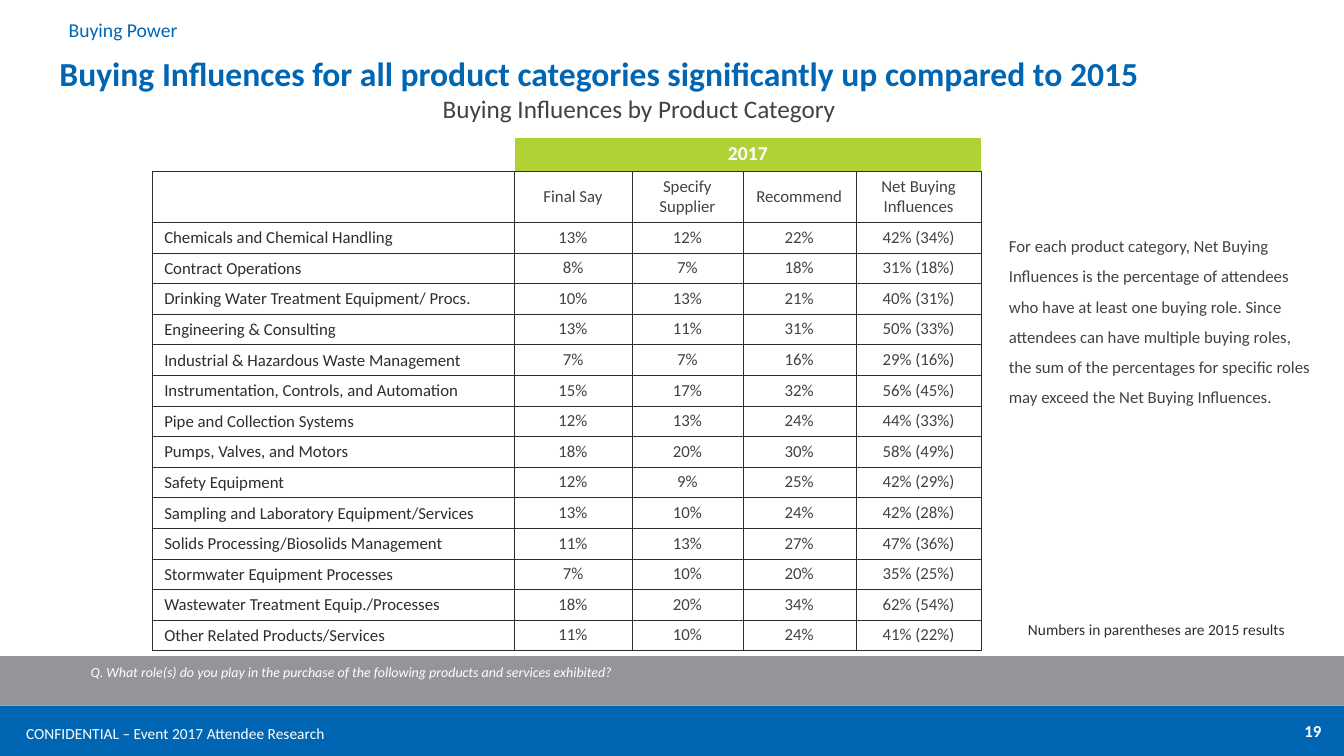
from dataclasses import dataclass
from typing import NamedTuple

from lxml.etree import SubElement
from pptx import Presentation
from pptx.dml.color import RGBColor
from pptx.enum.shapes import MSO_SHAPE
from pptx.enum.text import MSO_ANCHOR, MSO_AUTO_SIZE, PP_ALIGN
from pptx.oxml.ns import qn
from pptx.slide import Slide
from pptx.table import _Cell
from pptx.text.text import TextFrame
from pptx.util import Pt

FONT = "Calibri"
BLUE, GRAY, GREEN, WHITE = "0066B3", "939598", "B0D235", "FFFFFF"
TEXT_GRAY, NEAR_BLACK = "444143", "2F2D2E"


class Area(NamedTuple):
    left: float
    top: float
    width: float
    height: float


@dataclass(frozen=True)
class TextStyle:
    size: float
    color: str
    bold: bool = False
    italic: bool = False
    align: PP_ALIGN = PP_ALIGN.LEFT
    line_spacing: float = 1.0
    space_after: float = 0
    hanging: float = 0


@dataclass(frozen=True)
class TextBlock:
    text: str
    area: Area
    style: TextStyle
    grows: bool = True


@dataclass(frozen=True)
class Band:
    area: Area
    color: str


class Border(NamedTuple):
    color: str
    width: float


class Category(NamedTuple):
    name: str
    final_say: str
    specify_supplier: str
    recommend: str
    net_influences: str


BANDS = [
    Band(Area(0, 504, 960, 36), BLUE),
    Band(Area(0, 468.7, 960, 35.3), GRAY),
]

TITLE = TextBlock(
    "Buying Influences for all product categories significantly up compared to 2015",
    Area(35.3, 41.8, 904.3, 24.5),
    TextStyle(24, BLUE, bold=True, line_spacing=0.9), grows=False)
SECTION = TextBlock(
    "Buying Power", Area(41.8, 10, 185, 25.2),
    TextStyle(14, BLUE, line_spacing=0.9), grows=False)

TEXT_BOXES = [
    TextBlock("CONFIDENTIAL – Event 2017 Attendee Research",
              Area(11.5, 514, 547, 20.9), TextStyle(11, WHITE)),
    TextBlock("19", Area(735, 511.2, 216, 28.8),
              TextStyle(12, WHITE, bold=True, align=PP_ALIGN.RIGHT), grows=False),
    TextBlock("Q. What role(s) do you play in the purchase of the following "
              "products and services exhibited?",
              Area(57.6, 470.2, 811.4, 19.4),
              TextStyle(10, WHITE, italic=True, hanging=9.4)),
    TextBlock("Buying Influences by Product Category",
              Area(275.8, 63.4, 361.4, 28.8),
              TextStyle(18, TEXT_GRAY, align=PP_ALIGN.CENTER)),
    TextBlock("For each product category, Net Buying Influences is the percentage "
              "of attendees who have at least one buying role. Since attendees can "
              "have multiple buying roles, the sum of the percentages for specific "
              "roles may exceed the Net Buying Influences.",
              Area(713.5, 157.7, 234, 138.2),
              TextStyle(12, TEXT_GRAY, line_spacing=1.5, space_after=6)),
    TextBlock("Numbers in parentheses are 2015 results",
              Area(727.2, 439.2, 212.4, 20.9), TextStyle(11, NEAR_BLACK)),
]

TABLE_LEFT, TABLE_TOP = 108.7, 97.9
COLUMN_WIDTHS = [258.5, 84.2, 79.2, 80.6, 90]
YEAR_HEIGHT, ROLE_HEIGHT, CATEGORY_HEIGHT = 24.3, 36.5, 21.87
ROLES = ["", "Final Say", "Specify Supplier", "Recommend", "Net Buying Influences"]
CATEGORIES = [
    Category("Chemicals and Chemical Handling", "13%", "12%", "22%", "42% (34%)"),
    Category("Contract Operations", "8%", "7%", "18%", "31% (18%)"),
    Category("Drinking Water Treatment Equipment/ Procs.", "10%", "13%", "21%", "40% (31%)"),
    Category("Engineering & Consulting", "13%", "11%", "31%", "50% (33%)"),
    Category("Industrial & Hazardous Waste Management", "7%", "7%", "16%", "29% (16%)"),
    Category("Instrumentation, Controls, and Automation", "15%", "17%", "32%", "56% (45%)"),
    Category("Pipe and Collection Systems", "12%", "13%", "24%", "44% (33%)"),
    Category("Pumps, Valves, and Motors", "18%", "20%", "30%", "58% (49%)"),
    Category("Safety Equipment", "12%", "9%", "25%", "42% (29%)"),
    Category("Sampling and Laboratory Equipment/Services", "13%", "10%", "24%", "42% (28%)"),
    Category("Solids Processing/Biosolids Management", "11%", "13%", "27%", "47% (36%)"),
    Category("Stormwater Equipment Processes", "7%", "10%", "20%", "35% (25%)"),
    Category("Wastewater Treatment Equip./Processes", "18%", "20%", "34%", "62% (54%)"),
    Category("Other Related Products/Services", "11%", "10%", "24%", "41% (22%)"),
]
YEAR_STYLE = TextStyle(14, WHITE, bold=True, align=PP_ALIGN.CENTER)
VALUE_STYLE = TextStyle(12, TEXT_GRAY, align=PP_ALIGN.CENTER)
NAME_STYLE = TextStyle(12, NEAR_BLACK)
GRID, BLANK = Border(NEAR_BLACK, 0.25), Border(WHITE, 1)


def rgb(color: str) -> RGBColor:
    return RGBColor.from_string(color)


def write_text(frame: TextFrame, text: str, style: TextStyle) -> None:
    paragraph = frame.paragraphs[0]
    paragraph.alignment = style.align
    paragraph.line_spacing = style.line_spacing
    paragraph.space_before = Pt(0)
    paragraph.space_after = Pt(style.space_after)
    properties = paragraph._p.get_or_add_pPr()
    properties.set("marL", str(Pt(style.hanging)))
    properties.set("indent", str(-Pt(style.hanging)))
    SubElement(properties, qn("a:buNone"))
    run = paragraph.add_run()
    run.text = text
    run.font.name = FONT
    run.font.size = Pt(style.size)
    run.font.bold = style.bold
    run.font.italic = style.italic
    run.font.color.rgb = rgb(style.color)


def add_band(slide: Slide, band: Band) -> None:
    shape = slide.shapes.add_shape(MSO_SHAPE.RECTANGLE, *map(Pt, band.area))
    shape.shadow.inherit = False
    shape.fill.solid()
    shape.fill.fore_color.rgb = rgb(band.color)
    shape.line.fill.background()


def add_text_box(slide: Slide, block: TextBlock) -> None:
    frame = slide.shapes.add_textbox(*map(Pt, block.area)).text_frame
    frame.word_wrap = True
    frame.auto_size = MSO_AUTO_SIZE.SHAPE_TO_FIT_TEXT if block.grows else MSO_AUTO_SIZE.NONE
    write_text(frame, block.text, block.style)


def fill_placeholder(slide: Slide, index: int, block: TextBlock) -> None:
    shape = slide.placeholders[index]
    shape.left, shape.top, shape.width, shape.height = map(Pt, block.area)
    shape.text_frame.auto_size = MSO_AUTO_SIZE.NONE
    shape.text_frame.vertical_anchor = MSO_ANCHOR.MIDDLE
    write_text(shape.text_frame, block.text, block.style)


def format_cell(cell: _Cell, fill: str, sides: Border, top: Border) -> None:
    """Fill a cell and rule its edges; the bottom edge always belongs to the grid."""
    cell.vertical_anchor = MSO_ANCHOR.MIDDLE
    properties = cell._tc.get_or_add_tcPr()
    for tag, border in (("lnL", sides), ("lnR", sides), ("lnT", top), ("lnB", GRID)):
        line = SubElement(properties, qn(f"a:{tag}"), w=str(Pt(border.width)))
        SubElement(SubElement(line, qn("a:solidFill")), qn("a:srgbClr"), val=border.color)
    cell.fill.solid()
    cell.fill.fore_color.rgb = rgb(fill)


def add_influence_table(slide: Slide) -> None:
    heights = [YEAR_HEIGHT, ROLE_HEIGHT] + [CATEGORY_HEIGHT] * len(CATEGORIES)
    area = Area(TABLE_LEFT, TABLE_TOP, sum(COLUMN_WIDTHS), sum(heights))
    table = slide.shapes.add_table(len(heights), len(COLUMN_WIDTHS), *map(Pt, area)).table
    table.first_row = table.horz_banding = False
    for column, width in zip(table.columns, COLUMN_WIDTHS):
        column.width = Pt(width)
    for row, height in zip(table.rows, heights):
        row.height = Pt(height)

    for column, cell in enumerate(table.rows[0].cells):
        format_cell(cell, GREEN if column else WHITE, BLANK, BLANK)
    corner, year = table.cell(0, 0), table.cell(0, 1)
    corner.margin_top = corner.margin_bottom = Pt(0)
    year.merge(table.cell(0, len(COLUMN_WIDTHS) - 1))
    write_text(year.text_frame, "2017", YEAR_STYLE)

    for row, texts in enumerate([ROLES, *CATEGORIES], start=1):
        for column, text in enumerate(texts):
            cell = table.cell(row, column)
            format_cell(cell, WHITE, GRID, GRID)
            if column == 0:
                cell.margin_left, cell.margin_right = Pt(8.64), Pt(0.7)
                cell.margin_top, cell.margin_bottom = Pt(0.7), Pt(0)
            if text:
                write_text(cell.text_frame, text, VALUE_STYLE if column else NAME_STYLE)


def main() -> None:
    presentation = Presentation()
    presentation.slide_width, presentation.slide_height = Pt(960), Pt(540)
    slide = presentation.slides.add_slide(presentation.slide_layouts[1])
    fill_placeholder(slide, 0, TITLE)
    fill_placeholder(slide, 1, SECTION)
    for band in BANDS:
        add_band(slide, band)
    add_influence_table(slide)
    for block in TEXT_BOXES:
        add_text_box(slide, block)
    presentation.save("out.pptx")


if __name__ == "__main__":
    main()
